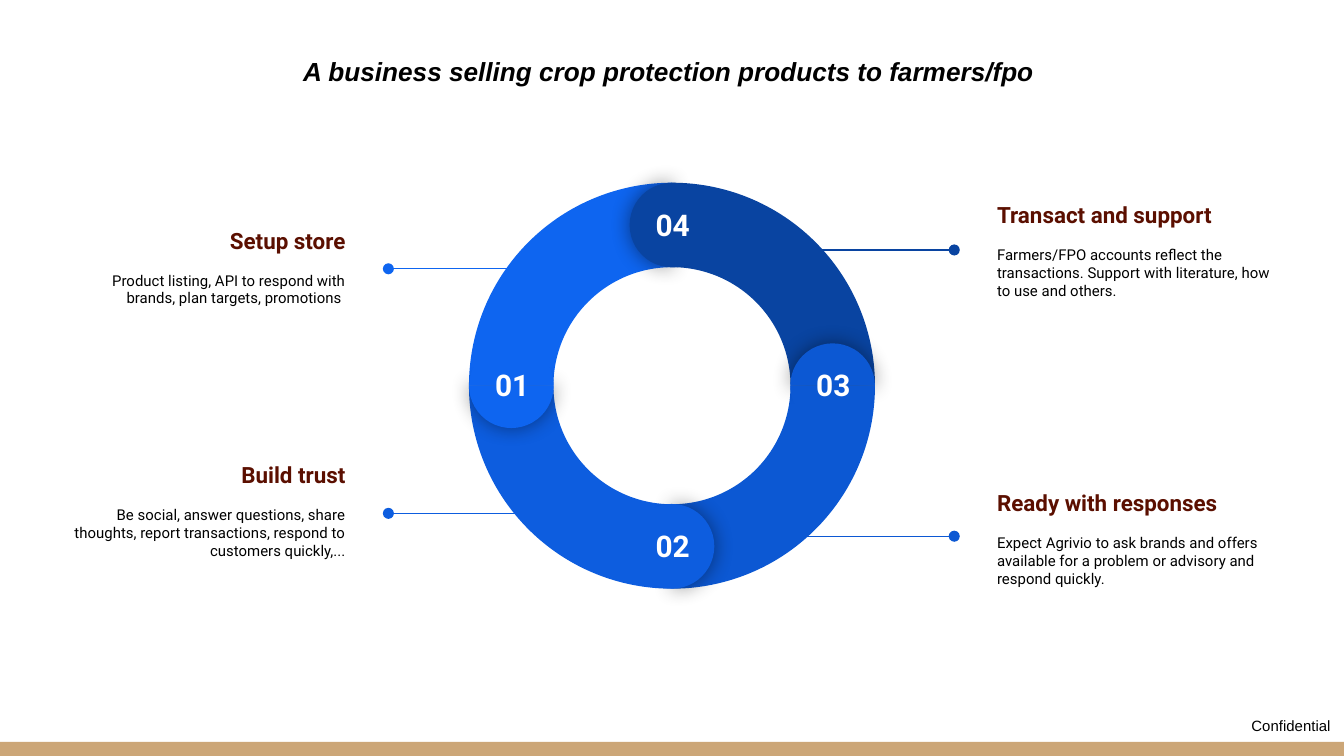
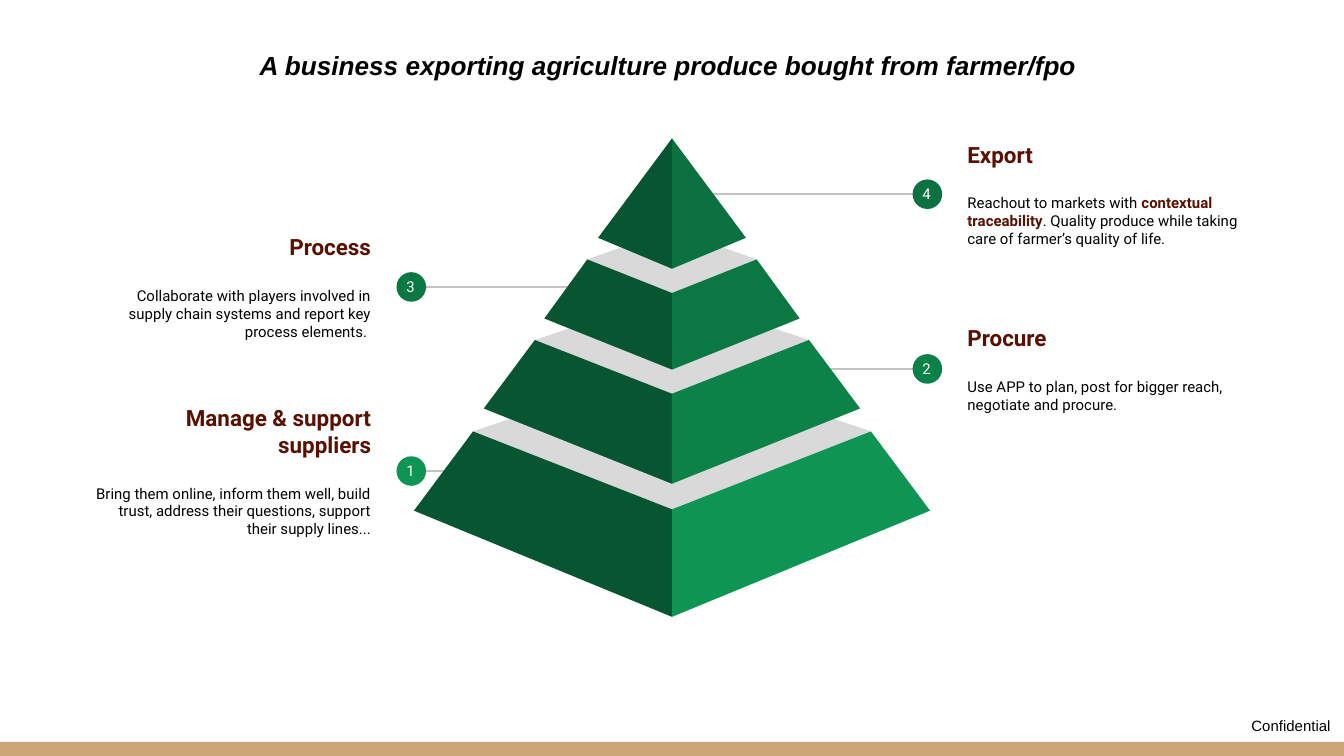
from math import cos, radians, sin

from lxml import etree
from pptx import Presentation
from pptx.dml.color import RGBColor
from pptx.enum.shapes import MSO_CONNECTOR, MSO_SHAPE
from pptx.enum.text import MSO_ANCHOR, MSO_AUTO_SIZE, PP_ALIGN
from pptx.oxml.ns import qn
from pptx.util import Inches, Pt

LEFT, CENTER, RIGHT = PP_ALIGN.LEFT, PP_ALIGN.CENTER, PP_ALIGN.RIGHT
TOP, MIDDLE = MSO_ANCHOR.TOP, MSO_ANCHOR.MIDDLE
RECT, OVAL = MSO_SHAPE.RECTANGLE, MSO_SHAPE.OVAL
ARC, PIE = MSO_SHAPE.BLOCK_ARC, MSO_SHAPE.PIE
STRAIGHT = MSO_CONNECTOR.STRAIGHT
NO_AUTOFIT = MSO_AUTO_SIZE.NONE
TITLE_ONLY = 5
DEGREE = 0.6  # adjustment units in one degree

COLORS = {
    "band": "CCA677", "text": "000000", "heading": "5B0F00", "white": "FFFFFF",
    "step1": "0E65F0", "step2": "0D5DDF", "step3": "0C58D3", "step4": "0944A1",
    "tier1": "0E9453", "tier2": "0C8148", "tier3": "0B7743", "tier4": "0B7140",
    "dark_face": "085631", "lid": "D9D9D9", "leader": "C2C2C2",
}

# number, angle of the cap on the ring (clockwise from the right)
RING_STEPS = [(3, 0), (2, 90), (1, 180), (4, 270)]

# colour, text box, heading, description, leader start, leader end
STEP_CALLOUTS = [
    ("step1", (0.35, 1.28, 2.32, 1.41), "Setup store",
     "Product listing, API to respond with brands, plan targets, promotions ",
     (4.03, 2), 2.89),
    ("step2", (0.35, 3.09, 2.32, 1.41), "Build trust",
     "Be social, answer questions, share thoughts, report transactions, "
     "respond to customers quickly,...", (4.32, 3.82), 2.89),
    ("step4", (7.32, 1.16, 2.32, 1.41), "Transact and support",
     "Farmers/FPO accounts reflect the transactions. Support with literature, "
     "how to use and others.", (5.7, 1.86), 7.1),
    ("step3", (7.32, 3.3, 2.32, 1.41), "Ready with responses",
     "Expect Agrivio to ask brands and offers available for a problem or "
     "advisory and respond quickly.", (5.7, 3.99), 7.1),
]

# number, left and top of the text box, heading, description, x where the leader starts
TIER_CALLOUTS = [
    (2, 7.1, 2.17, "Procure",
     "Use APP to plan, post for bigger reach, negotiate and procure.", 6.15),
    (1, 0.59, 2.93, "Manage & support suppliers",
     "Bring them online, inform them well, build trust, address their questions, "
     "support their supply lines...", 4.22),
    (4, 7.1, 0.87, "Export",
     ["Reachout to markets with ",
      ("contextual traceability", {"bold": True, "color": "heading"}),
      ". Quality produce while taking care of farmer’s quality of life."], 5.29),
    (3, 0.59, 1.56, "Process",
     "Collaborate with players involved in supply chain systems and report key "
     "process elements. ", 4.22),
]

# number, lid apex y, shoulder (half width, y), foot (half width, y), front edge ys
TIERS = [
    (1, 1.68, (1.48, 2.18), (1.92, 2.77), (2.76, 3.56)),
    (2, 1.16, (1.02, 1.5), (1.4, 2.01), (1.9, 2.57)),
    (3, 0.68, (0.63, 0.9), (0.95, 1.34), (1.15, 1.72)),
    (4, None, (0, 0), (0.55, 0.74), (0, 0.97)),
]


def rgb(color):
    return RGBColor.from_string(COLORS[color])


def inches(values):
    return [Inches(value) for value in values]


def write(paragraph, text, *, size=8, font="Roboto", color="text", bold=False,
          italic=False, align=LEFT, before=0, after=0):
    """Fill a paragraph with a string, or a list of strings and (string, changes)."""
    paragraph.alignment = align
    paragraph.space_before, paragraph.space_after = Pt(before), Pt(after)
    for part in [text] if isinstance(text, str) else text:
        words, changes = (part, {}) if isinstance(part, str) else part
        run = paragraph.add_run()
        run.text = words
        run.font.size, run.font.name = Pt(size), font
        run.font.bold = changes.get("bold", bold)
        run.font.italic = italic
        run.font.color.rgb = rgb(changes.get("color", color))


def prepare_frame(frame, anchor=TOP):
    frame.word_wrap = True
    frame.auto_size = NO_AUTOFIT
    frame.vertical_anchor = anchor
    frame.margin_left = frame.margin_right = Inches(0.1)
    frame.margin_top = frame.margin_bottom = Inches(0.1)
    return frame


def add_text(slide, box, text, anchor=TOP, **style):
    frame = prepare_frame(slide.shapes.add_textbox(*inches(box)).text_frame, anchor)
    write(frame.paragraphs[0], text, **style)
    return frame


def paint(shape, color):
    shape.shadow.inherit = False
    shape.fill.solid()
    shape.fill.fore_color.rgb = rgb(color)
    shape.line.fill.background()


def add_solid(slide, kind, box, color, rotation=0, adjustments=()):
    shape = slide.shapes.add_shape(kind, *inches(box))
    paint(shape, color)
    shape.rotation = rotation
    for index, value in enumerate(adjustments):
        shape.adjustments[index] = value
    return shape


def add_glow_shadow(shape):
    """Give the shape a soft black shadow on all sides."""
    effects = shape.element.spPr.find(qn("a:effectLst"))
    shadow = etree.SubElement(effects, qn("a:outerShdw"), blurRad=str(Pt(11.2)),
                              dist="0", dir="0", algn="ctr", rotWithShape="0")
    black = etree.SubElement(shadow, qn("a:srgbClr"), val=COLORS["text"])
    etree.SubElement(black, qn("a:alpha"), val="43000")


def add_leader(slide, start, end_x, color, dot=False):
    x, y = start
    leader = slide.shapes.add_connector(STRAIGHT, *inches((x, y, end_x, y)))
    leader.line.color.rgb = rgb(color)
    leader.line.width = Pt(0.75)
    properties = leader.element.spPr
    if dot:
        etree.SubElement(properties.find(qn("a:ln")), qn("a:tailEnd"), type="oval")
    etree.SubElement(properties, qn("a:effectLst"))


def add_polygon(slide, points, color):
    first, *rest = [tuple(inches(point)) for point in points]
    builder = slide.shapes.build_freeform(*first)
    builder.add_line_segments(rest, close=True)
    paint(builder.convert_to_shape(), color)


def add_description(slide, box, heading, description, gap):
    align = RIGHT if box[0] < 5 else LEFT
    frame = add_text(slide, box, heading, MIDDLE, size=12, color="heading",
                     bold=True, align=align)
    write(frame.add_paragraph(), description, align=align, before=gap, after=16)


def start_slide(prs, title, title_box):
    """Add a slide with the title, the bottom band and the confidential note."""
    slide = prs.slides.add_slide(prs.slide_layouts[TITLE_ONLY])
    add_solid(slide, RECT, (0, 5.52, 10, 0.11), "band")
    heading = slide.shapes.title
    heading.left, heading.top, heading.width, heading.height = inches(title_box)
    write(prepare_frame(heading.text_frame).paragraphs[0], title, size=14,
          font="Arial", bold=True, italic=True, align=CENTER)
    add_text(slide, (8.73, 5.23, 1.27, 0.39), "Confidential", font="Arial", align=RIGHT)
    return slide


def add_ring(slide, left, top, size):
    """Draw four ring quarters, each starting with a rounded, numbered cap."""
    cap = 0.63
    radius = (size - cap) / 2
    for number, angle in RING_STEPS:
        add_solid(slide, ARC, (left, top, size, size), f"step{number}",
                  (angle + 150) % 360, (210 * DEGREE, 300 * DEGREE, 0.208))
    half_disc = (90 * DEGREE, 270 * DEGREE)
    for number, angle in RING_STEPS:
        x = left + size / 2 + radius * cos(radians(angle))
        y = top + size / 2 + radius * sin(radians(angle))
        box = (x - cap / 2, y - cap / 2, cap, cap)
        color = f"step{number}"
        add_glow_shadow(add_solid(slide, PIE, box, color, (angle + 90) % 360, half_disc))
        add_solid(slide, PIE, box, color, (angle + 270) % 360, half_disc)
        add_text(slide, (x - 0.27, y - 0.24, 0.55, 0.29), f"{number:02}", size=16,
                 color="white", bold=True, align=CENTER)


def add_tier_callout(slide, number, left, top, heading, description, leader_x):
    width, height, badge = 2.27, 1.15, 0.22
    middle = top + height / 2
    badge_x = left + width + 0.2 if left < 5 else left - 0.2
    add_description(slide, (left, top, width, height), heading, description, gap=14)
    add_leader(slide, (leader_x, middle), badge_x, "leader")
    add_solid(slide, OVAL, (badge_x - badge / 2, middle - badge / 2, badge, badge),
              f"tier{number}")
    add_text(slide, (badge_x - 0.14, middle - 0.17, 0.27, 0.34), str(number),
             color="white", align=CENTER, after=16)


def add_pyramid(slide, center, top):
    def add_face(points, side, color):
        add_polygon(slide, [(center + side * x, top + y) for x, y in points], color)

    for _, lid_top, (half, y), _, (front, _) in TIERS:
        if lid_top is not None:
            add_face([(-half, y), (0, front), (half, y), (0, lid_top)], 1, "lid")
    for number, _, shoulder, foot, (front_top, front_bottom) in TIERS:
        face = [shoulder, (0, front_top), (0, front_bottom), foot]
        add_face(face, -1, "dark_face")
        add_face(face, 1, f"tier{number}")


def build_ring_slide(prs):
    slide = start_slide(prs, "A business selling crop protection products to farmers/fpo ",
                        (0.98, 0.31, 8.05, 0.41))
    add_ring(slide, 3.49, 1.36, 3.02)
    for color, box, heading, description, start, end_x in STEP_CALLOUTS:
        add_description(slide, box, heading, description, gap=9.4)
        add_leader(slide, start, end_x, color, dot=True)


def build_pyramid_slide(prs):
    slide = start_slide(
        prs, "A business exporting agriculture produce bought from farmer/fpo ",
        (0, 0.27, 10, 0.41))
    for callout in TIER_CALLOUTS:
        add_tier_callout(slide, *callout)
    add_pyramid(slide, 5, 1.03)


def main():
    prs = Presentation()
    prs.slide_width = Inches(10)
    prs.slide_height = prs.slide_width * 9 // 16
    build_ring_slide(prs)
    build_pyramid_slide(prs)
    prs.save("out.pptx")


if __name__ == "__main__":
    main()
